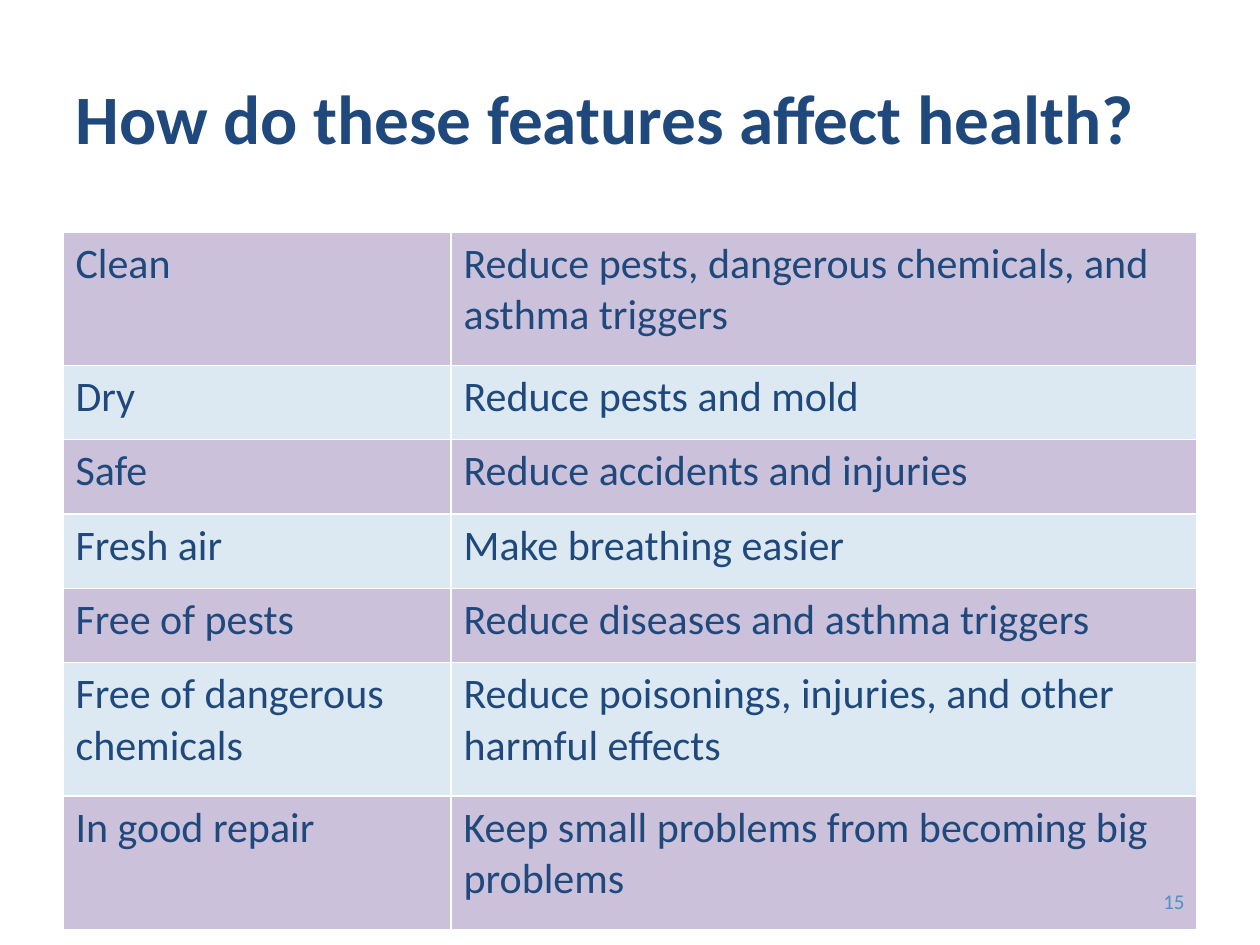
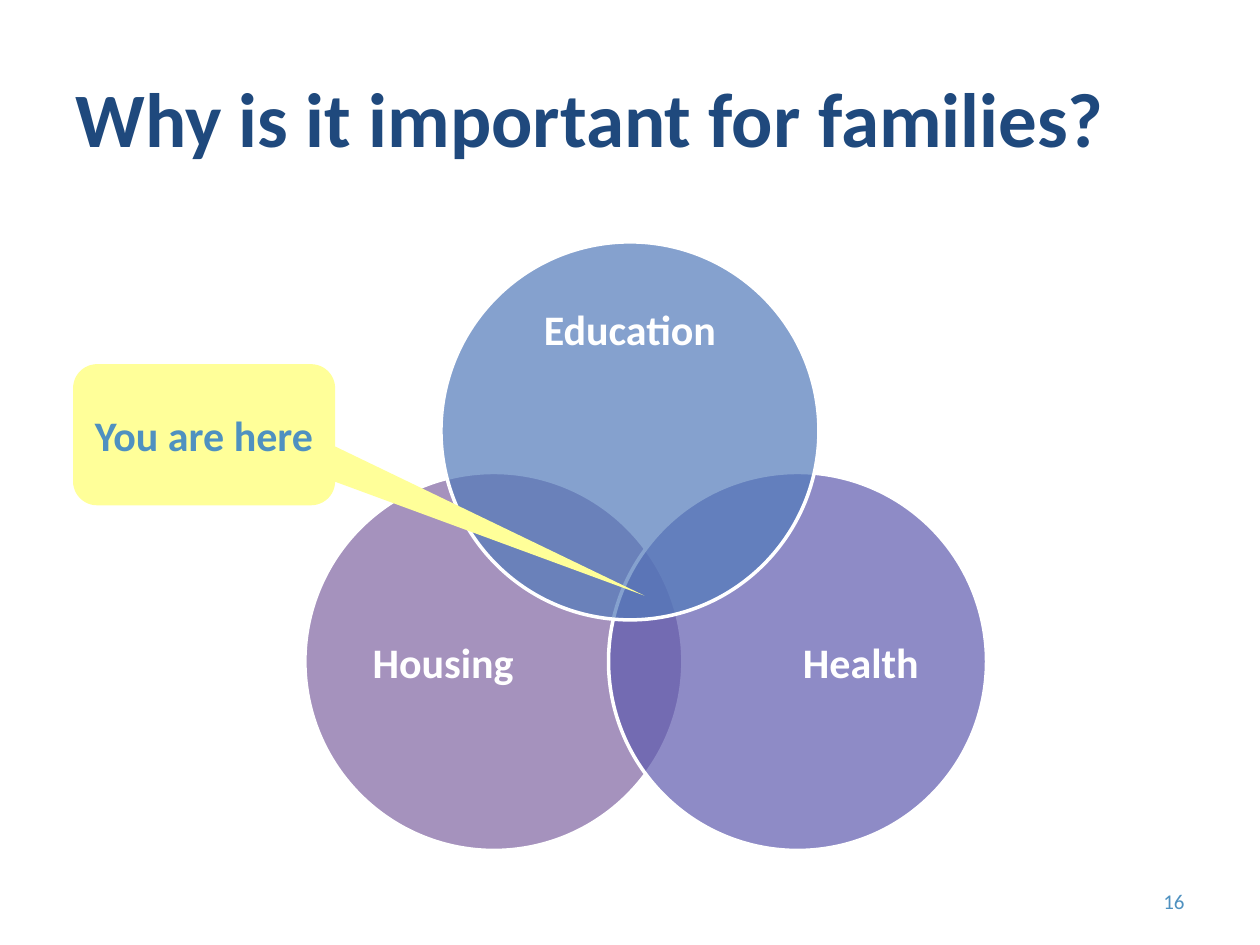
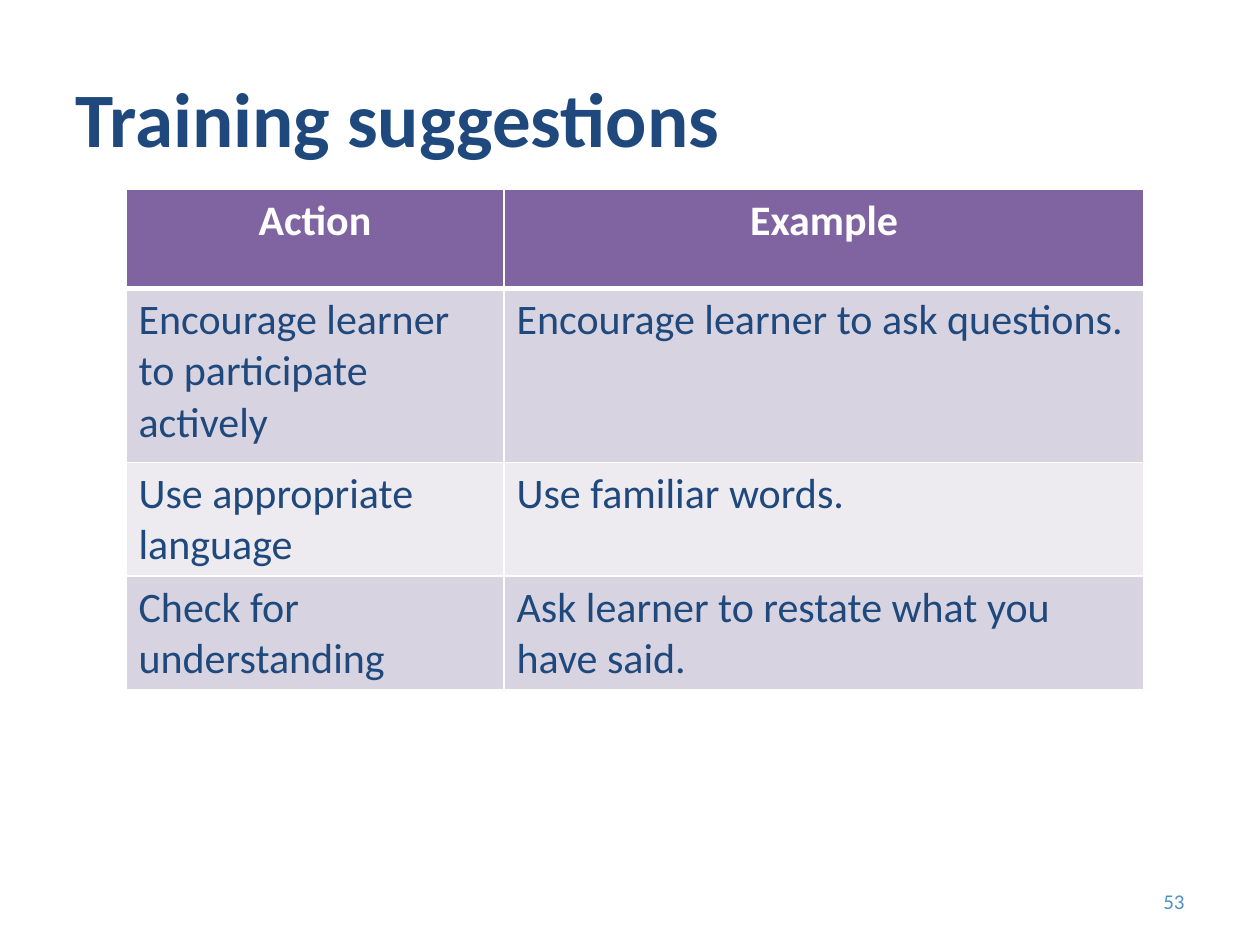
import pptx
import pptx.util
import pptx.dml.color
import pptx.enum.shapes
import pptx.enum.text
import pptx.oxml
import pptx.oxml.ns
import lxml.etree

Inches = pptx.util.Inches
Pt = pptx.util.Pt
Shape = pptx.enum.shapes.MSO_SHAPE
Align = pptx.enum.text.PP_ALIGN
Anchor = pptx.enum.text.MSO_ANCHOR
qn = pptx.oxml.ns.qn

NAVY, WHITE, SKY = "1F497D", "FFFFFF", "4F91C0"
LILAC, ICE, YELLOW = "CCC1DA", "DCE9F2", "FFFF99"
PURPLE, VIOLET, BLUE = "8064A2", "5F5BAE", "527ABA"
MAUVE, PALE = "D8D3E0", "EDEAF0"


def color(value):
    return pptx.dml.color.RGBColor.from_string(value)


def paint(item, value, alpha=100):
    item.fill.solid()
    item.fill.fore_color.rgb = color(value)
    if alpha < 100:
        tone = item.fill._xPr.find(".//" + qn("a:srgbClr"))
        lxml.etree.SubElement(tone, qn("a:alpha"), val=str(alpha * 1000))


def write(frame, text, size=24, tint=NAVY, bold=False, align=Align.LEFT,
          anchor=Anchor.TOP):
    frame.word_wrap = True
    frame.vertical_anchor = anchor
    para = frame.paragraphs[0]
    para.alignment = align
    run = para.add_run()
    run.text = text
    run.font.name = "Calibri"
    run.font.size = Pt(size)
    run.font.bold = bold
    run.font.color.rgb = color(tint)


def edge(cell, side, width):
    props = cell._tc.get_or_add_tcPr()
    line = lxml.etree.SubElement(props, qn("a:ln" + side), w=str(Pt(width)))
    fill = lxml.etree.SubElement(line, qn("a:solidFill"))
    lxml.etree.SubElement(fill, qn("a:srgbClr"), val=WHITE)


class Deck:
    def __init__(self):
        self.file = pptx.Presentation()
        self.file.slide_width = Inches(10)
        self.file.slide_height = Inches(7.5)

    def start(self, title, size=44):
        self.slide = self.file.slides.add_slide(self.file.slide_layouts[6])
        self.label((0.5, 0.3, 9, 1.25), title, size=size, bold=True)

    def label(self, box, text, **style):
        shape = self.slide.shapes.add_textbox(*map(Inches, box))
        write(shape.text_frame, text, anchor=Anchor.MIDDLE, **style)

    def number(self, page):
        self.label((7.17, 6.95, 2.33, 0.4), str(page), size=12, tint=SKY,
                   align=Align.RIGHT)

    def shape(self, kind, box, text, fill, alpha=100, line=None, **style):
        shape = self.slide.shapes.add_shape(kind, *map(Inches, box))
        shape.shadow.inherit = False
        paint(shape, fill, alpha)
        if line:
            shape.line.color.rgb = color(line)
            shape.line.width = Pt(2)
        else:
            shape.line.fill.background()
        write(shape.text_frame, text, bold=True, **style)
        return shape

    def circle(self, left, top, text, fill, align, anchor=Anchor.MIDDLE):
        self.shape(Shape.OVAL, (left, top, 3, 3), text, fill, alpha=70,
                   line=WHITE, tint=WHITE, align=align, anchor=anchor)

    def table(self, left, top, widths, heights, rows, bands, head=None):
        box = map(Inches, (left, top, sum(widths), sum(heights)))
        grid = self.slide.shapes.add_table(len(rows), len(widths), *box).table
        grid.first_row = grid.horz_banding = False
        for col, width in zip(grid.columns, widths):
            col.width = Inches(width)
        for r, (height, texts) in enumerate(zip(heights, rows)):
            grid.rows[r].height = Inches(height)
            top_row = bool(head) and r == 0
            for c, text in enumerate(texts):
                cell = grid.cell(r, c)
                edge(cell, "L", 1)
                edge(cell, "R", 1)
                edge(cell, "T", 3 if head and r == 1 else 1)
                edge(cell, "B", 3 if top_row else 1)
                paint(cell, head if top_row else bands[r % 2])
                write(cell.text_frame, text, bold=top_row,
                      tint=WHITE if top_row else NAVY,
                      align=Align.CENTER if top_row else Align.LEFT)


def main():
    deck = Deck()

    deck.start("How do these features affect health?", size=39.6)
    tall, short = 1.06, 0.59
    deck.table(0.5, 1.84, (3.08, 5.92), [tall] + [short] * 4 + [tall] * 2, [
        ("Clean", "Reduce pests, dangerous chemicals, and asthma triggers"),
        ("Dry", "Reduce pests and mold"),
        ("Safe", "Reduce accidents and injuries"),
        ("Fresh air", "Make breathing easier"),
        ("Free of pests", "Reduce diseases and asthma triggers"),
        ("Free of dangerous chemicals",
         "Reduce poisonings, injuries, and other harmful effects"),
        ("In good repair", "Keep small problems from becoming big problems"),
    ], (LILAC, ICE))
    deck.number(15)

    deck.start("Why is it important for families?")
    deck.circle(2.42, 3.75, "Housing", PURPLE, Align.LEFT)
    deck.circle(4.83, 3.75, "Health", VIOLET, Align.RIGHT)
    deck.circle(3.5, 1.92, "Education", BLUE, Align.CENTER, Anchor.TOP)
    note = deck.shape(Shape.ROUNDED_RECTANGULAR_CALLOUT,
                      (0.58, 2.89, 2.08, 1.12), "You are here", YELLOW,
                      tint=SKY, align=Align.CENTER, anchor=Anchor.MIDDLE)
    for i, value in enumerate((1.68, 1.14, 0.17)):
        note.adjustments[i] = value
    deck.number(16)

    deck.start("Training suggestions")
    deck.table(1, 1.5, (3, 5.08), (0.79, 1.38, 0.8, 0.8), [
        ("Action", "Example"),
        ("Encourage learner to participate actively",
         "Encourage learner to ask questions."),
        ("Use appropriate language", "Use familiar words."),
        ("Check for understanding",
         "Ask learner to restate what you have said."),
    ], (PALE, MAUVE), head=PURPLE)
    deck.number(53)

    deck.file.save("out.pptx")


if __name__ == "__main__":
    main()
